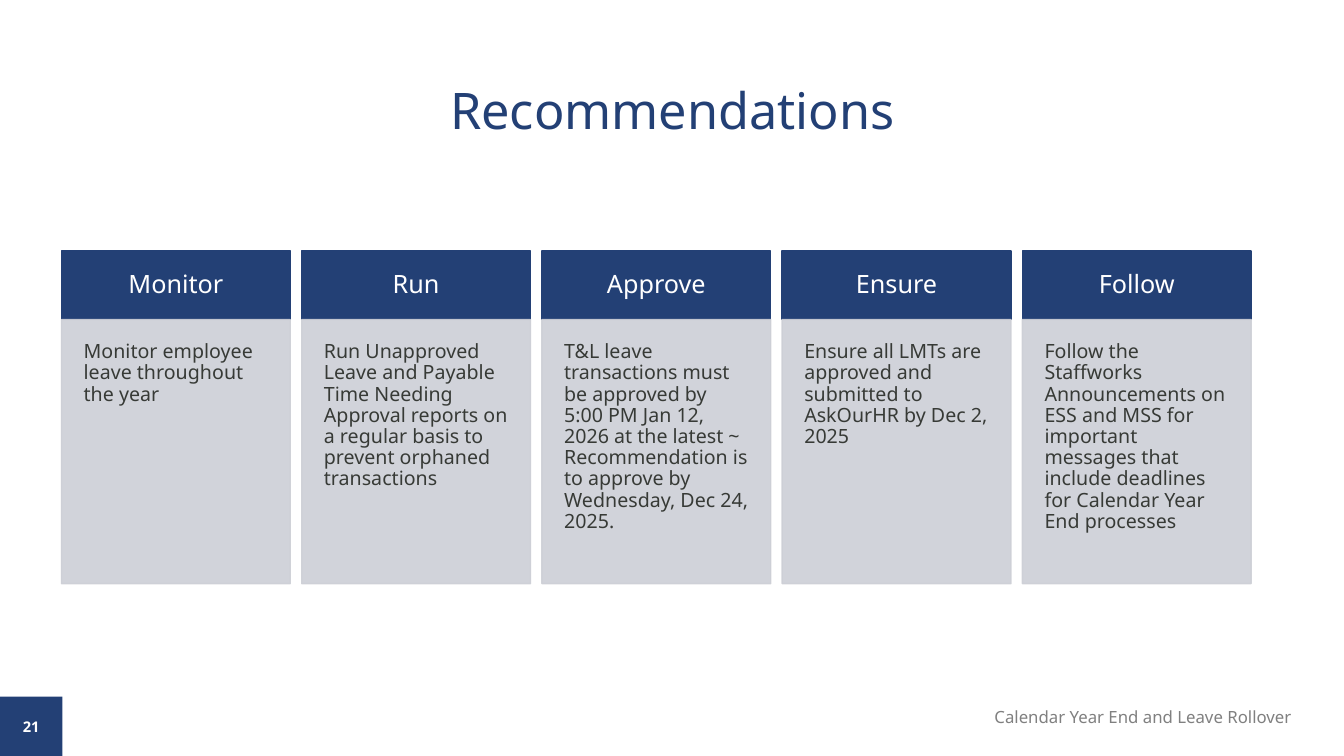
from dataclasses import dataclass

from lxml import etree
from pptx import Presentation
from pptx.dml import color
from pptx.enum import shapes, text
from pptx.oxml import ns
from pptx.util import Inches, Pt

FONT = "Noto Sans"
COLORS = {"navy": "234075", "panel": "CDCFD6", "body": "373A36",
          "footer": "808080", "white": "FFFFFF"}
LEFT, TOP, PITCH, WIDTH = 0.61, 2.49, 2.3825, 2.27
HEAD_H, BODY_H = 0.68, 2.62


@dataclass
class Card:
    head: str
    body: str


@dataclass
class Style:
    size: float
    color: str
    align: text.PP_ALIGN = text.PP_ALIGN.CENTER
    anchor: text.MSO_ANCHOR = text.MSO_ANCHOR.MIDDLE
    inset: float = 0.1
    spacing: float = 1.0
    bold: bool = False


CARDS = [
    Card("Monitor", "Monitor employee leave throughout the year"),
    Card("Run", "Run Unapproved Leave and Payable Time Needing Approval reports "
         "on a regular basis to prevent orphaned transactions"),
    Card("Approve", "T&L leave transactions must be approved by 5:00 PM Jan 12, 2026 "
         "at the latest ~ Recommendation is to approve by Wednesday, Dec 24, 2025."),
    Card("Ensure", "Ensure all LMTs are approved and submitted to AskOurHR by Dec 2, 2025"),
    Card("Follow", "Follow the Staffworks Announcements on ESS and MSS for important "
         "messages that include deadlines for Calendar Year End processes"),
]
TITLE = Style(36, "navy", spacing=0.9)
HEAD = Style(18, "white", inset=0.18, spacing=0.9)
BODY = Style(14, "body", text.PP_ALIGN.LEFT, text.MSO_ANCHOR.TOP, 0.22, 0.9)
NUMBER = Style(10.5, "white", bold=True)
FOOTER = Style(12, "footer", text.PP_ALIGN.RIGHT, text.MSO_ANCHOR.TOP)


def rgb(name: str) -> color.RGBColor:
    return color.RGBColor.from_string(COLORS[name])


def write(sp, words: str, style: Style) -> None:
    tf = sp.text_frame
    tf.word_wrap = True
    tf.vertical_anchor = style.anchor
    tf.margin_left = tf.margin_right = Inches(style.inset)
    tf.margin_top = tf.margin_bottom = Inches(style.inset)
    p = tf.paragraphs[0]
    p.alignment = style.align
    p.line_spacing = style.spacing
    r = p.add_run()
    r.text = words
    r.font.name = FONT
    r.font.size = Pt(style.size)
    r.font.bold = style.bold
    r.font.color.rgb = rgb(style.color)


def add_box(s, x: float, y: float, w: float, h: float, fill: str,
            outlined: bool = True, opacity: int = 100):
    sp = s.shapes.add_shape(shapes.MSO_SHAPE.RECTANGLE,
                            Inches(x), Inches(y), Inches(w), Inches(h))
    sp.shadow.inherit = False
    sp.fill.solid()
    sp.fill.fore_color.rgb = rgb(fill)
    if outlined:
        sp.line.color.rgb = rgb(fill)
        sp.line.width = Pt(1)
    else:
        sp.line.fill.background()
    if opacity < 100:
        for clr in sp._element.spPr.iter(ns.qn("a:srgbClr")):
            etree.SubElement(clr, ns.qn("a:alpha")).set("val", str(opacity * 1000))
    return sp


def add_card(s, x: float, card: Card) -> None:
    write(add_box(s, x, TOP, WIDTH, HEAD_H, "navy"), card.head, HEAD)
    panel = add_box(s, x, TOP + HEAD_H, WIDTH, BODY_H, "panel", opacity=90)
    write(panel, card.body, BODY)


def main() -> None:
    prs = Presentation()
    prs.slide_width, prs.slide_height = Inches(13.33), Inches(7.5)
    s = prs.slides.add_slide(prs.slide_layouts[5])

    # Title
    title = s.shapes.title
    title.left, title.top = Inches(0.92), Inches(0.4)
    title.width, title.height = Inches(11.5), Inches(1.45)
    write(title, "Recommendations", TITLE)

    # Recommendation cards
    for i, card in enumerate(CARDS):
        add_card(s, LEFT + i * PITCH, card)

    # Page number and footer
    write(add_box(s, 0, 6.91, 0.62, 0.59, "navy", outlined=False), "21", NUMBER)
    footer = s.shapes.add_textbox(Inches(9.5), Inches(6.91), Inches(3.41), Inches(0.3))
    write(footer, "Calendar Year End and Leave Rollover", FOOTER)

    prs.save("out.pptx")


if __name__ == "__main__":
    main()
